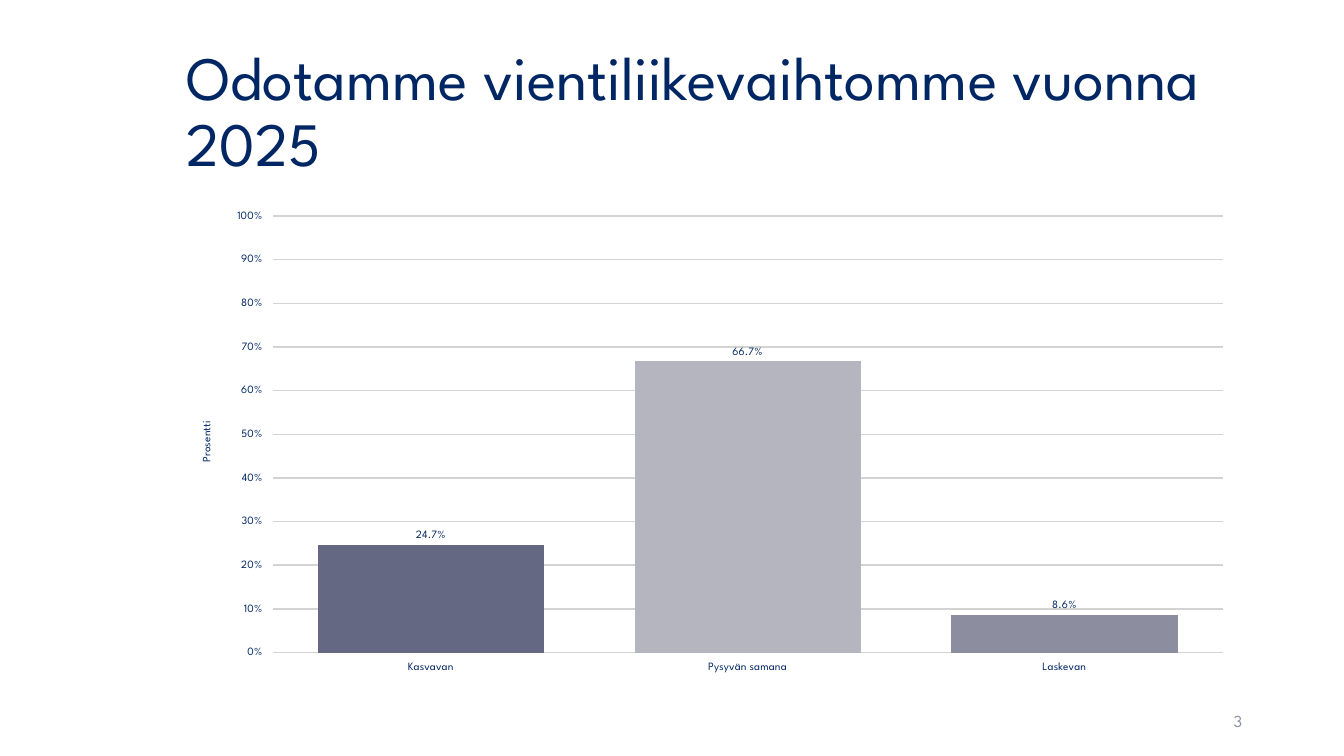
from dataclasses import dataclass

from lxml import etree
from pptx import Presentation
from pptx.chart.data import CategoryChartData as Data
from pptx.dml.color import RGBColor as Rgb
from pptx.enum.chart import XL_CHART_TYPE as Kind
from pptx.enum.chart import XL_LABEL_POSITION as Spot
from pptx.enum.chart import XL_TICK_MARK as Tick
from pptx.enum.text import MSO_ANCHOR as Anchor
from pptx.enum.text import PP_ALIGN as Align
from pptx.oxml.ns import qn
from pptx.util import Inches, Pt

FACE = "League Spartan"
NAVY = "002663"
GREY = "8C8E9F"
GRID = "D3D3D3"


@dataclass
class Bar:
    name: str
    share: float
    fill: str


BARS = [
    Bar("Kasvavan", 0.247, "646883"),
    Bar("Pysyvän samana", 0.667, "B4B5BF"),
    Bar("Laskevan", 0.086, GREY),
]


def tint(color, code: str) -> None:
    color.rgb = Rgb.from_string(code)


def style(font, size: float, code: str = NAVY) -> None:
    font.name = FACE
    font.size = Pt(size)
    font.bold = False
    tint(font.color, code)


def place(shape, left: float, top: float, width: float, height: float) -> None:
    shape.left, shape.top = Inches(left), Inches(top)
    shape.width, shape.height = Inches(width), Inches(height)


def add_title(slide, text: str) -> None:
    title = slide.shapes.title
    place(title, 1.75, 0.4, 10.59, 1.45)
    frame = title.text_frame
    frame.text = text
    frame.word_wrap = True
    frame.vertical_anchor = Anchor.MIDDLE
    para = frame.paragraphs[0]
    para.alignment = Align.LEFT
    para.line_spacing = 0.9
    style(para.font, 44)


def add_page(slide, text: str) -> None:
    box = slide.shapes.add_textbox(Inches(9.42), Inches(6.95), Inches(3), Inches(0.4))
    frame = box.text_frame
    frame.text = text
    frame.word_wrap = True
    frame.vertical_anchor = Anchor.MIDDLE
    para = frame.paragraphs[0]
    para.alignment = Align.RIGHT
    para.space_after = Pt(6)
    style(para.font, 12, GREY)


def fix_plot(chart, **spans: float) -> None:
    area = chart.element.find(".//" + qn("c:plotArea"))
    for old in area.findall(qn("c:layout")):
        area.remove(old)
    layout = etree.Element(qn("c:layout"))
    area.insert(0, layout)
    manual = etree.SubElement(layout, qn("c:manualLayout"))
    modes = {"layoutTarget": "inner", "xMode": "edge", "yMode": "edge"}
    for tag, val in {**modes, **spans}.items():
        etree.SubElement(manual, qn("c:" + tag), val=str(val))


def add_bars(slide, bars: list[Bar]) -> None:
    data = Data(number_format="0.0%")
    data.categories = [bar.name for bar in bars]
    data.add_series("Series 1", [bar.share for bar in bars])
    chart = slide.shapes.add_chart(
        Kind.COLUMN_CLUSTERED, Inches(1.75), Inches(2), Inches(10.59), Inches(4.76), data
    ).chart
    chart.has_legend = False
    chart.has_title = False
    style(chart.font, 18)

    for axis in (chart.category_axis, chart.value_axis):
        axis.major_tick_mark = Tick.OUTSIDE
        axis.format.line.fill.background()
        style(axis.tick_labels.font, 8)

    scale = chart.value_axis
    scale.minimum_scale, scale.maximum_scale, scale.major_unit = 0, 1, 0.1
    scale.tick_labels.number_format = "0%"
    scale.tick_labels.number_format_is_linked = False
    scale.has_major_gridlines = True
    line = scale.major_gridlines.format.line
    line.width = Pt(1)
    tint(line.color, GRID)
    label = scale.axis_title.text_frame
    label.text = "Prosentti"
    style(label.paragraphs[0].font, 8)

    plot = chart.plots[0]
    plot.gap_width, plot.overlap = 40, -2
    plot.vary_by_categories = False
    plot.has_data_labels = True
    tags = plot.data_labels
    tags.show_value = True
    tags.number_format = "0.0%"
    tags.number_format_is_linked = False
    tags.position = Spot.OUTSIDE_END
    style(tags.font, 8)
    for i, bar in enumerate(bars):
        fill = plot.series[0].points[i].format.fill
        fill.solid()
        tint(fill.fore_color, bar.fill)
    fix_plot(chart, x=0.09, y=0.03, w=0.89, h=0.91)


def main() -> None:
    deck = Presentation()
    deck.slide_width, deck.slide_height = Inches(13.33), Inches(7.5)
    slide = deck.slides.add_slide(deck.slide_layouts[5])
    add_title(slide, "Odotamme vientiliikevaihtomme vuonna 2025")
    add_bars(slide, BARS)
    add_page(slide, "3")
    deck.save("out.pptx")


if __name__ == "__main__":
    main()
